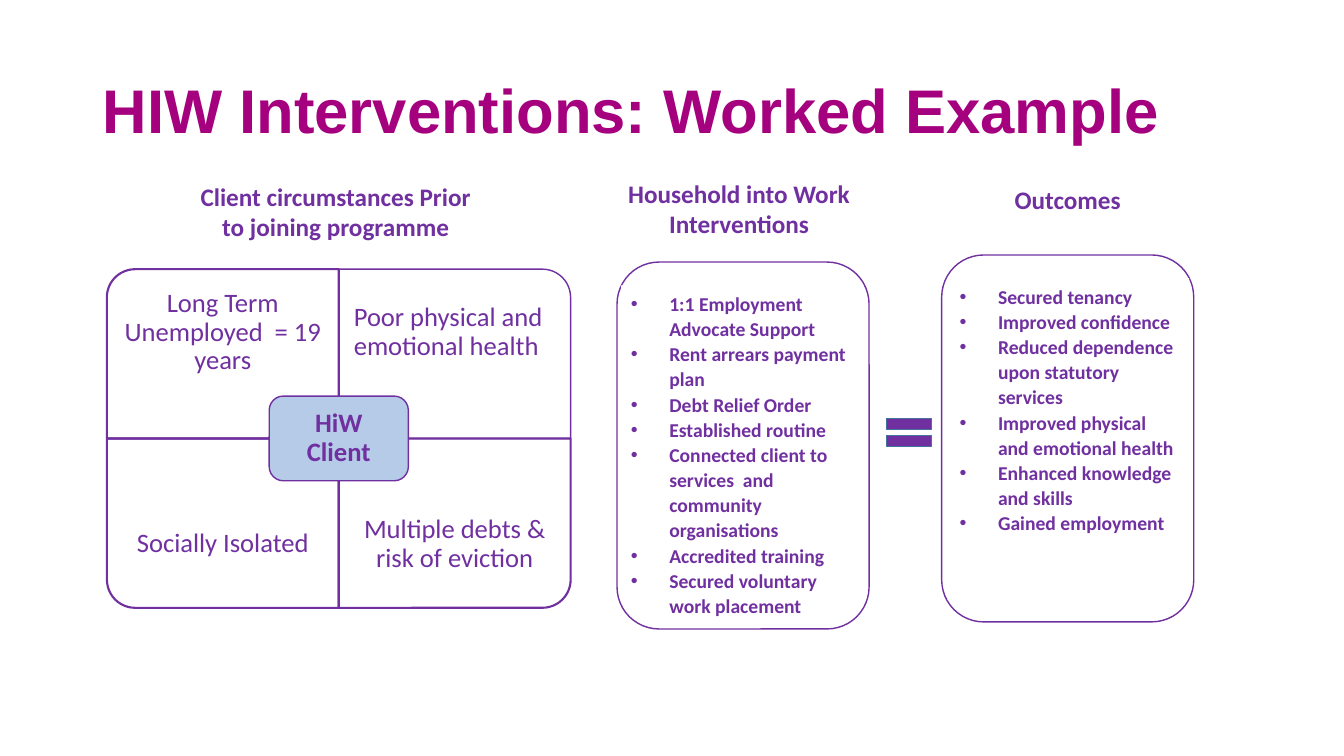
from lxml import etree
from pptx import Presentation
from pptx import util as u
from pptx.dml.color import RGBColor
from pptx.enum import shapes, text
from pptx.oxml.ns import qn

PURPLE = "7030A0"
MAGENTA = "A5017F"
PALE_BLUE = "B5CBE7"
WHITE = "FFFFFF"
KIND = shapes.MSO_SHAPE
CENTER = text.PP_ALIGN.CENTER
LEFT = text.PP_ALIGN.LEFT
MIDDLE = text.MSO_ANCHOR.MIDDLE
TOP = text.MSO_ANCHOR.TOP

QUADRANTS = [
    # text, rotation of the rounded corner, line width, alignment
    [("Long Term Unemployed  = 19 years", 270, 1.5, CENTER),
     ("Poor physical and emotional health", 0, 1, LEFT)],
    [("Socially Isolated", 180, 1.5, CENTER),
     ("Multiple debts & risk of eviction", 90, 1.5, CENTER)],
]
INTERVENTIONS = [
    "1:1 Employment Advocate Support",
    "Rent arrears payment plan",
    "Debt Relief Order",
    "Established routine",
    "Connected client to services  and community organisations",
    "Accredited training",
    "Secured voluntary work placement",
]
OUTCOMES = [
    "Secured tenancy",
    "Improved confidence",
    "Reduced dependence upon statutory services",
    "Improved physical and emotional health",
    "Enhanced knowledge and skills",
    "Gained employment",
]


def color(hex_string):
    return RGBColor.from_string(hex_string)


def add_box(slide, kind, box, fill=None, line=None, width=1):
    shape = slide.shapes.add_shape(kind, *map(u.Inches, box))
    shape.shadow.inherit = False
    if fill:
        shape.fill.solid()
        shape.fill.fore_color.rgb = color(fill)
    else:
        shape.fill.background()
    if line:
        shape.line.color.rgb = color(line)
        shape.line.width = u.Pt(width)
    else:
        shape.line.fill.background()
    return shape


def add_bullet(paragraph, indent=0.38):
    properties = paragraph._p.get_or_add_pPr()
    properties.set("marL", str(u.Inches(indent)))
    properties.set("indent", str(-u.Inches(indent)))
    etree.SubElement(properties, qn("a:buFont")).set("typeface", "Arial")
    etree.SubElement(properties, qn("a:buChar")).set("char", "•")


def write(shape, lines, size, bold=False, ink=PURPLE, font="Calibri", align=CENTER,
          anchor=MIDDLE, spacing=0.9, inset=None, wrap=True, bullets=False):
    frame = shape.text_frame
    frame.text = "\n".join(lines)
    frame.word_wrap = wrap
    frame.vertical_anchor = anchor
    if inset is not None:
        frame.margin_left = frame.margin_right = u.Inches(inset)
        frame.margin_top = frame.margin_bottom = u.Inches(inset)
    for paragraph in frame.paragraphs:
        paragraph.alignment = align
        paragraph.line_spacing = spacing
        if bullets:
            add_bullet(paragraph)
        for run in paragraph.runs:
            run.font.name = font
            run.font.size = u.Pt(size)
            run.font.bold = bold
            run.font.color.rgb = color(ink)


def add_text(slide, box, lines, size, **style):
    write(slide.shapes.add_textbox(*map(u.Inches, box)), lines, size, **style)


def add_heading(slide, box, lines):
    add_text(slide, box, lines, 18, bold=True, anchor=TOP, spacing=1, wrap=False)


def add_circumstances(slide, box):
    """Four quadrants, rounded on the outside, around the client label."""
    left, top, width, height = box
    cell_width, cell_height = width / 2, height / 2
    text_height = cell_height * 0.75
    for row, cells in enumerate(QUADRANTS):
        for column, (label, rotation, line_width, align) in enumerate(cells):
            x, y = left + column * cell_width, top + row * cell_height
            # A quarter turn swaps the sides about the same centre
            turned = rotation % 180 == 90
            w, h = (cell_height, cell_width) if turned else (cell_width, cell_height)
            frame = (x + (cell_width - w) / 2, y + (cell_height - h) / 2, w, h)
            quadrant = add_box(slide, KIND.ROUND_1_RECTANGLE, frame,
                               line=PURPLE, width=line_width)
            quadrant.rotation = rotation
            text_top = y + row * (cell_height - text_height)
            add_text(slide, (x, text_top, cell_width, text_height), [label], 19,
                     align=align, inset=0.15)
    hub_width, hub_height = width * 0.3, height / 4
    hub = add_box(slide, KIND.ROUNDED_RECTANGLE,
                  (left + (width - hub_width) / 2, top + (height - hub_height) / 2,
                   hub_width, hub_height), fill=PALE_BLUE, line=PURPLE)
    write(hub, ["HiW Client"], 19, bold=True, inset=0.12)


def add_list_panel(slide, box, items, margin, list_height):
    """Rounded panel holding a bulleted list on a plain white block."""
    left, top, width, height = box
    add_box(slide, KIND.ROUNDED_RECTANGLE, box, fill=WHITE, line=PURPLE)
    block = add_box(slide, KIND.RECTANGLE,
                    (left + margin, top + 0.23, width * 0.95, list_height), fill=WHITE)
    write(block, items, 14, bold=True, align=LEFT, anchor=TOP, spacing=1.07, bullets=True)


def main():
    presentation = Presentation()
    presentation.slide_width = u.Inches(13.33)
    presentation.slide_height = u.Inches(7.5)
    slide = presentation.slides.add_slide(presentation.slide_layouts[6])

    add_text(slide, (0.92, 0.4, 11.5, 1.45), ["HIW Interventions: Worked Example"], 44,
             bold=True, ink=MAGENTA, font="Arial", align=LEFT)
    add_circumstances(slide, (1.06, 2.67, 4.6, 3.36))
    add_list_panel(slide, (6.12, 2.6, 2.5, 3.64), INTERVENTIONS, 0.04, 3.01)
    add_list_panel(slide, (9.34, 2.53, 2.5, 3.64), OUTCOMES, 0.08, 2.56)
    add_box(slide, KIND.MATH_EQUAL, (8.71, 4.05, 0.61, 0.48), fill=PURPLE, line="43739E")

    add_heading(slide, (1.88, 1.75, 2.9, 0.71),
                ["Client circumstances Prior", "to joining programme"])
    add_heading(slide, (6.12, 1.72, 2.42, 0.71), ["Household into Work", "Interventions"])
    add_heading(slide, (9.96, 1.78, 1.26, 0.4), ["Outcomes"])
    presentation.save("out.pptx")


if __name__ == "__main__":
    main()
